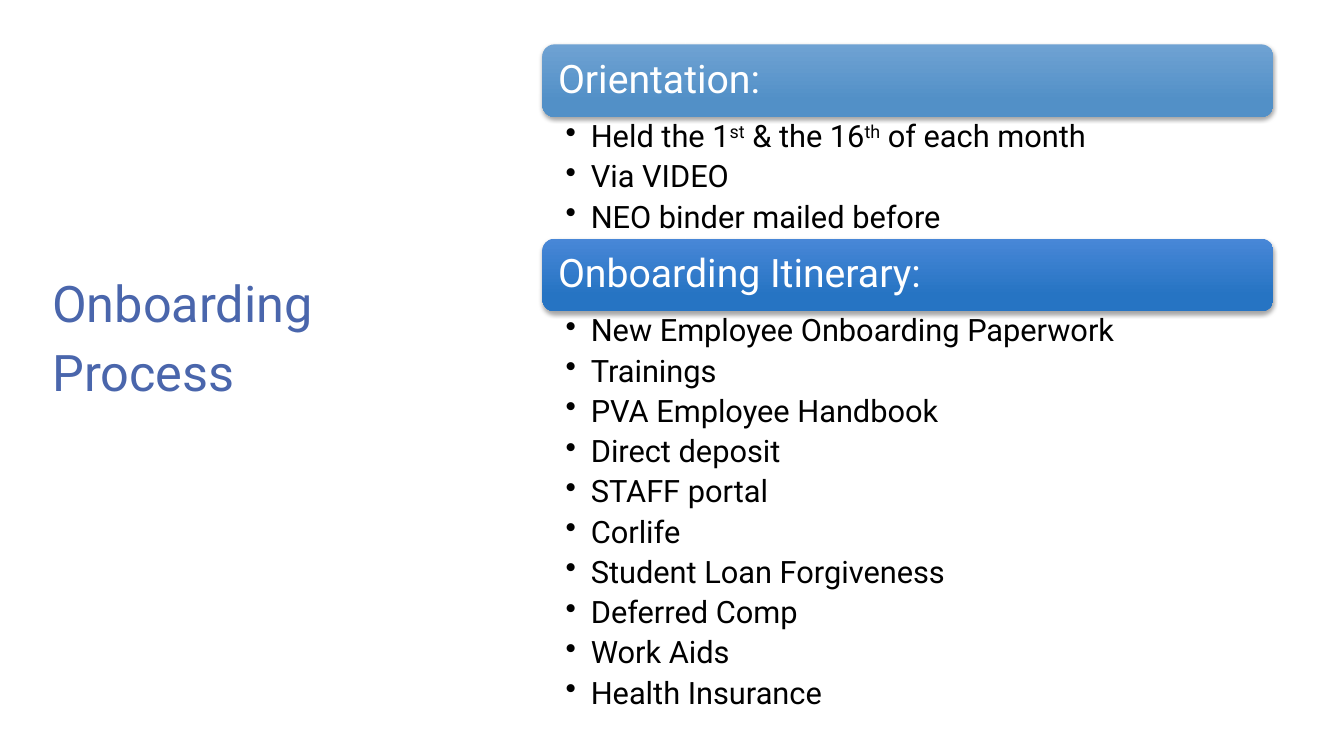
"""Build the onboarding process slide."""
from lxml import etree
from pptx import Presentation
from pptx import util as u
from pptx.dml.color import RGBColor
from pptx.enum import shapes, text
from pptx.oxml import ns

INDIGO = RGBColor(0x4A, 0x66, 0xAC)
WHITE = RGBColor(0xFF, 0xFF, 0xFF)
BLACK = RGBColor(0x00, 0x00, 0x00)
SKY = (RGBColor(0x6F, 0xA2, 0xD3), RGBColor(0x52, 0x90, 0xC7))
COBALT = (RGBColor(0x48, 0x87, 0xD7), RGBColor(0x26, 0x74, 0xC3))

TITLE = {"size": u.Pt(36), "color": INDIGO, "after": u.Pt(6), "spacing": 1.0}
HEADING = {"size": u.Pt(28), "color": WHITE, "after": u.Pt(0), "spacing": 0.9}
ITEM = {"size": u.Pt(22), "color": BLACK, "after": u.Pt(5), "spacing": 0.9}

LEFT, WIDTH, TOP, BAR_HEIGHT = 40.36, 54.39, 5.87, 9.6
SECTIONS = [
    ("Orientation:", SKY, 16.1, [
        ["Held the 1", "st", " & the 16", "th", " of each month"],
        ["Via VIDEO"],
        ["NEO binder mailed before"],
    ]),
    ("Onboarding Itinerary:", COBALT, 52.4, [
        ["New Employee Onboarding Paperwork"],
        ["Trainings"],
        ["PVA Employee Handbook"],
        ["Direct deposit"],
        ["STAFF portal"],
        ["Corlife"],
        ["Student Loan Forgiveness"],
        ["Deferred Comp"],
        ["Work Aids"],
        ["Health Insurance"],
    ]),
]


class Deck:
    """Hold the style and the slide, on a grid of 100 columns by 100 rows."""

    font_name = "Roboto"

    def __init__(self):
        """Open a blank widescreen slide."""
        self.show = Presentation()
        self.show.slide_width, self.show.slide_height = u.Inches(13.33), u.Inches(7.5)
        self.slide = self.show.slides.add_slide(self.show.slide_layouts[6])

    def place(self, left, top, width, height):
        """Turn columns and rows into lengths."""
        column, row = self.show.slide_width / 100, self.show.slide_height / 100
        return [u.Emu(round(n)) for n in
                (left * column, top * row, width * column, height * row)]

    def typeset(self, frame, lines, style, insets, anchor, bulleted=False):
        """Fill a frame; every second run of a line is superscript."""
        layout = {"word_wrap": True, "vertical_anchor": anchor}
        sides = ("margin_left", "margin_top", "margin_right", "margin_bottom")
        layout.update(zip(sides, map(u.Inches, insets)))
        for key, value in layout.items():
            setattr(frame, key, value)
        for i, line in enumerate(lines):
            paragraph = frame.add_paragraph() if i else frame.paragraphs[0]
            form = {"alignment": text.PP_ALIGN.LEFT, "space_after": style["after"],
                    "line_spacing": style["spacing"], "level": int(bulleted)}
            for key, value in form.items():
                setattr(paragraph, key, value)
            if bulleted:
                self.bullet(paragraph)
            for j, words in enumerate(line):
                run = paragraph.add_run()
                run.text = words
                for key, value in {"name": self.font_name, "size": style["size"]}.items():
                    setattr(run.font, key, value)
                run.font.color.rgb = style["color"]
                if j % 2:
                    run._r.get_or_add_rPr().set("baseline", "30000")

    def bullet(self, paragraph):
        """Give a paragraph a hanging bullet."""
        props = paragraph._p.get_or_add_pPr()
        props.set("marL", str(u.Inches(0.25)))
        props.set("indent", str(-u.Inches(0.25)))
        etree.SubElement(props, ns.qn("a:buChar"), char="•")

    def textbox(self, at, lines, style, insets, anchor, bulleted=False):
        """Add a text box."""
        box = self.slide.shapes.add_textbox(*self.place(*at))
        self.typeset(box.text_frame, lines, style, insets, anchor, bulleted)

    def bar(self, at, heading, shades):
        """Add a shaded, rounded heading bar."""
        bar = self.slide.shapes.add_shape(
            shapes.MSO_SHAPE.ROUNDED_RECTANGLE, *self.place(*at))
        bar.line.fill.background()
        bar.fill.gradient()
        bar.fill.gradient_angle = 270
        for stop, shade, position in zip(bar.fill.gradient_stops, shades, (0, 0.78)):
            stop.color.rgb, stop.position = shade, position
        self.shadow(bar)
        self.typeset(bar.text_frame, [[heading]], HEADING, [0.12] * 4,
                     text.MSO_ANCHOR.MIDDLE)

    def shadow(self, shape):
        """Drop a soft shadow straight down."""
        shape.shadow.inherit = False
        effects = shape._element.spPr.find(ns.qn("a:effectLst"))
        drop = etree.SubElement(effects, ns.qn("a:outerShdw"), blurRad=str(u.Pt(3)),
                                dist=str(u.Pt(2)), dir="5400000", rotWithShape="0")
        tint = etree.SubElement(drop, ns.qn("a:srgbClr"), val=str(BLACK))
        etree.SubElement(tint, ns.qn("a:alpha"), val="35000")


def main():
    """Lay out the title and the two sections."""
    deck = Deck()
    top = TOP
    for heading, shades, list_height, items in SECTIONS:
        deck.bar((LEFT, top, WIDTH, BAR_HEIGHT), heading, shades)
        top += BAR_HEIGHT
        deck.textbox((LEFT, top, WIDTH, list_height), items, ITEM,
                     (0.23, 0.04, 0.22, 0.04), text.MSO_ANCHOR.TOP, bulleted=True)
        top += list_height
    deck.textbox((3.15, 32.27, 22.06, 24.53), [["Onboarding"], ["Process"]], TITLE,
                 (0.1, 0.05, 0.1, 0.05), text.MSO_ANCHOR.MIDDLE)
    deck.show.save("out.pptx")


if __name__ == "__main__":
    main()
